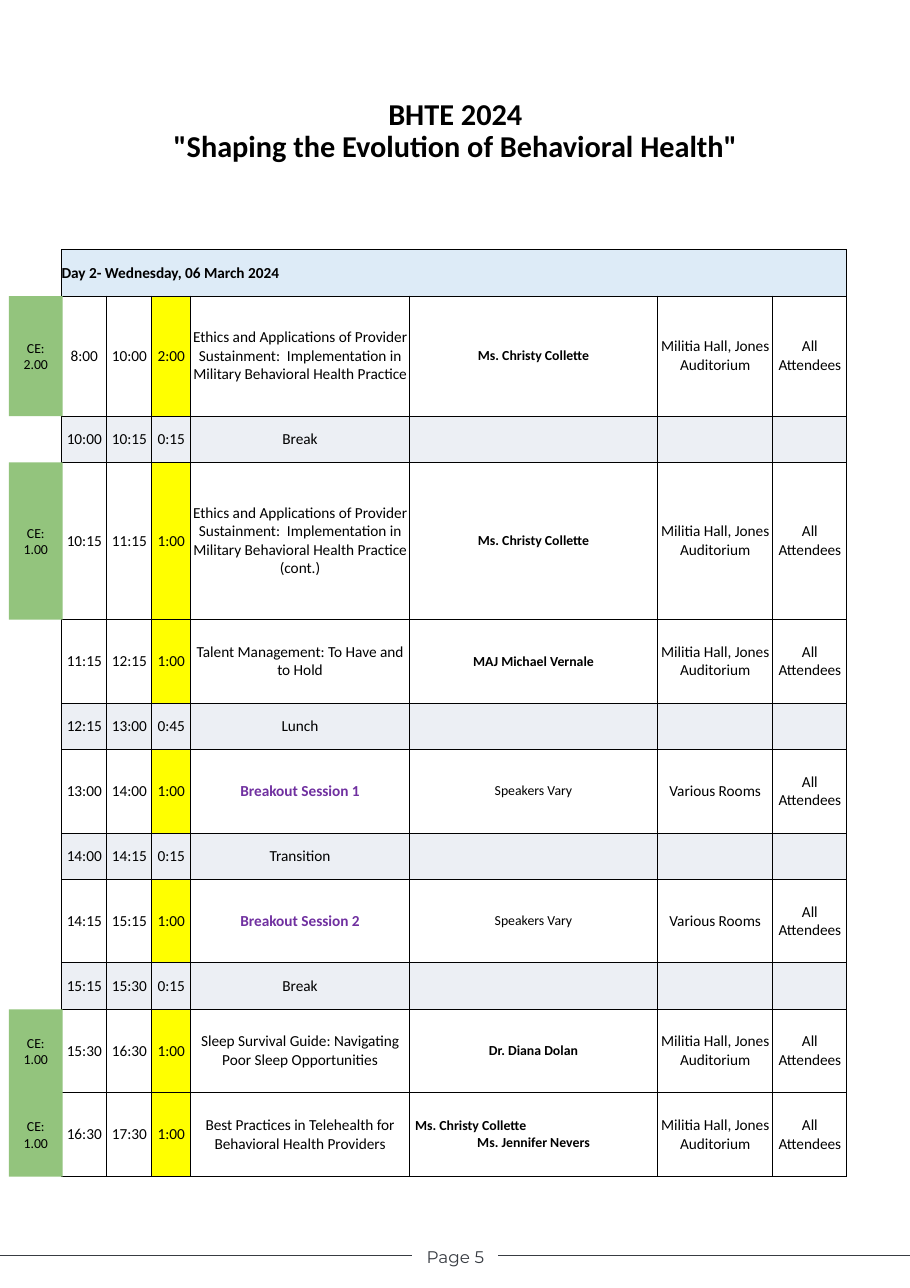
from itertools import accumulate
from lxml import etree
from pptx import Presentation
from pptx.dml.color import RGBColor
from pptx.enum.shapes import MSO_CONNECTOR, MSO_SHAPE
from pptx.enum.text import MSO_ANCHOR, PP_ALIGN
from pptx.oxml.ns import qn
from pptx.util import Inches, Pt

LEFT, CENTER = PP_ALIGN.LEFT, PP_ALIGN.CENTER
TOP, MIDDLE = MSO_ANCHOR.TOP, MSO_ANCHOR.MIDDLE
RECT, STRAIGHT = MSO_SHAPE.RECTANGLE, MSO_CONNECTOR.STRAIGHT

BLACK = RGBColor(0x00, 0x00, 0x00)
WHITE = RGBColor(0xFF, 0xFF, 0xFF)
SKY = RGBColor(0xDD, 0xEB, 0xF7)
YELLOW = RGBColor(0xFF, 0xFF, 0x00)
MIST = RGBColor(0xEC, 0xEF, 0xF4)
PURPLE = RGBColor(0x70, 0x30, 0xA0)
GREEN = RGBColor(0x93, 0xC4, 0x7D)
SLATE = RGBColor(0x38, 0x3C, 0x42)
BODY_FONT, FOOTER_FONT = "Calibri", "Montserrat"

TITLE = ["BHTE 2024", '"Shaping the Evolution of Behavioral Health"']
DAY = "Day 2- Wednesday, 06 March 2024"
FOOTER = "Page 5"
HALL, ROOMS = "Militia Hall, Jones Auditorium", "Various Rooms"
ALL = "All Attendees"
VARY = "Speakers Vary"
ETHICS = ("Ethics and Applications of Provider Sustainment:  "
          "Implementation in Military Behavioral Health Practice")

SHORT, NORMAL, TALL, TALLEST = 0.42, 0.76, 1.09, 1.43
SESSIONS = [
    (TALL, "2.00", "8:00", "10:00", "2:00", ETHICS, ["Ms. Christy Collette"], HALL),
    (SHORT, "", "10:00", "10:15", "0:15", "Break", [], ""),
    (TALLEST, "1.00", "10:15", "11:15", "1:00", ETHICS + " (cont.)",
     ["Ms. Christy Collette"], HALL),
    (NORMAL, "", "11:15", "12:15", "1:00", "Talent Management: To Have and to Hold",
     ["MAJ Michael Vernale"], HALL),
    (SHORT, "", "12:15", "13:00", "0:45", "Lunch", [], ""),
    (NORMAL, "", "13:00", "14:00", "1:00", "Breakout Session 1", [VARY], ROOMS),
    (SHORT, "", "14:00", "14:15", "0:15", "Transition", [], ""),
    (NORMAL, "", "14:15", "15:15", "1:00", "Breakout Session 2", [VARY], ROOMS),
    (SHORT, "", "15:15", "15:30", "0:15", "Break", [], ""),
    (NORMAL, "1.00", "15:30", "16:30", "1:00",
     "Sleep Survival Guide: Navigating Poor Sleep Opportunities", ["Dr. Diana Dolan"], HALL),
    (NORMAL, "1.00", "16:30", "17:30", "1:00",
     "Best Practices in Telehealth for Behavioral Health Providers",
     ["Ms. Christy Collette", "Ms. Jennifer Nevers"], HALL),
]

SLIDE_W, SLIDE_H = Pt(595), Pt(842.5)
COLS = [0.41, 0.41, 0.35, 1.99, 2.25, 1.05, 0.67]
ROWS = [SHORT] + [session[0] for session in SESSIONS]
TABLE_X, TABLE_Y = 0.56, 2.27
CE_X, CE_W = 0.08, 0.49
FOOTER_Y, RULE_W = Inches(11.41), Inches(3.74)


def add_run(p, text, size, bold=False, color=BLACK, font=BODY_FONT):
    r = p.add_run()
    r.text = text
    r.font.size, r.font.bold, r.font.name = Pt(size), bold, font
    r.font.color.rgb = color


def set_frame(tf, anchor, side, top, bottom):
    tf.word_wrap = True
    tf.vertical_anchor = anchor
    tf.margin_left = tf.margin_right = Inches(side)
    tf.margin_top, tf.margin_bottom = Inches(top), Inches(bottom)


def add_box(s, x, y, w, h, anchor, side, top, bottom):
    tf = s.shapes.add_textbox(Inches(x), Inches(y), Inches(w), Inches(h)).text_frame
    set_frame(tf, anchor, side, top, bottom)
    p = tf.paragraphs[0]
    p.alignment = CENTER
    return p


def style_cell(cell, fill):
    cell.margin_left = cell.margin_right = cell.margin_top = cell.margin_bottom = 0
    cell.vertical_anchor = MIDDLE
    tc_pr = cell._tc.get_or_add_tcPr()
    for side in ("a:lnL", "a:lnR", "a:lnT", "a:lnB"):
        ln = etree.SubElement(tc_pr, qn(side), w=str(Pt(0.75)))
        solid = etree.SubElement(ln, qn("a:solidFill"))
        etree.SubElement(solid, qn("a:srgbClr"), val=str(BLACK))
    if fill is None:
        cell.fill.background()
    else:
        cell.fill.solid()
        cell.fill.fore_color.rgb = fill


def fill_cell(cell, lines, size, bold, color, align=CENTER):
    tf = cell.text_frame
    for i, line in enumerate(lines):
        p = tf.paragraphs[0] if i == 0 else tf.add_paragraph()
        p.alignment = align
        add_run(p, line, size, bold, color)


def add_schedule(s):
    frame = s.shapes.add_table(len(ROWS), len(COLS), Inches(TABLE_X), Inches(TABLE_Y),
                               Inches(sum(COLS)), Inches(sum(ROWS)))
    table = frame.table
    table.first_row = table.horz_banding = False
    for column, width in zip(table.columns, COLS):
        column.width = Inches(width)
    for row, height in zip(table.rows, ROWS):
        row.height = Inches(height)

    for cell in table.rows[0].cells:
        style_cell(cell, SKY)
    table.cell(0, 0).merge(table.cell(0, len(COLS) - 1))
    fill_cell(table.cell(0, 0), [DAY], 10, True, BLACK, LEFT)

    for row, session in enumerate(SESSIONS, 1):
        start, end, length, topic, speakers, room = session[2:]
        pause = not speakers
        breakout = speakers == [VARY]
        values = [[start], [end], [length], [topic], speakers,
                  [] if pause else [room], [] if pause else [ALL]]
        for col, lines in enumerate(values):
            cell = table.cell(row, col)
            fill = MIST if pause else YELLOW if col == 2 else None
            style_cell(cell, fill)
            if col == 4:
                fill_cell(cell, lines, 9, not breakout, BLACK)
            else:
                named = breakout and col == 3
                fill_cell(cell, lines, 10, named, PURPLE if named else BLACK)
        if len(speakers) > 1:
            shared = table.cell(row, 4)
            shared.fill.solid()
            shared.fill.fore_color.rgb = WHITE
            shared.margin_left = shared.margin_right = Inches(0.05)
            shared.text_frame.paragraphs[0].alignment = LEFT


def add_credits(s):
    tops = accumulate(ROWS, initial=TABLE_Y)
    next(tops)
    for session, y in zip(SESSIONS, tops):
        height, credit = session[:2]
        if not credit:
            continue
        sp = s.shapes.add_shape(RECT, Inches(CE_X), Inches(y), Inches(CE_W), Inches(height))
        sp.shadow.inherit = False
        sp.fill.solid()
        sp.fill.fore_color.rgb = GREEN
        sp.line.fill.background()
        tf = sp.text_frame
        set_frame(tf, MIDDLE, 0.1, 0.1, 0.1)
        for p, text in ((tf.paragraphs[0], "CE:"), (tf.add_paragraph(), credit)):
            p.alignment = CENTER
            add_run(p, text, 9)


def add_footer(s):
    p = add_box(s, 3.63, 11.3, 1.01, 0.22, TOP, 0, 0.03, 0)
    add_run(p, FOOTER, 11, color=SLATE, font=FOOTER_FONT)
    for x in (0, SLIDE_W - RULE_W):
        rule = s.shapes.add_connector(STRAIGHT, x, FOOTER_Y, x + RULE_W, FOOTER_Y)
        rule.line.color.rgb = SLATE
        rule.line.width = Pt(0.75)
        etree.SubElement(rule._element.spPr, qn("a:effectLst"))


def main():
    prs = Presentation()
    prs.slide_width, prs.slide_height = SLIDE_W, SLIDE_H
    s = prs.slides.add_slide(prs.slide_layouts[6])
    p = add_box(s, 0.57, 0.85, sum(COLS), 1.42, TOP, 0.1, 0.05, 0.05)
    p.line_spacing = 0.9
    for i, line in enumerate(TITLE):
        if i:
            p.add_line_break()
        add_run(p, line, 19.8, True)
    add_schedule(s)
    add_credits(s)
    add_footer(s)
    prs.save("out.pptx")


if __name__ == "__main__":
    main()
